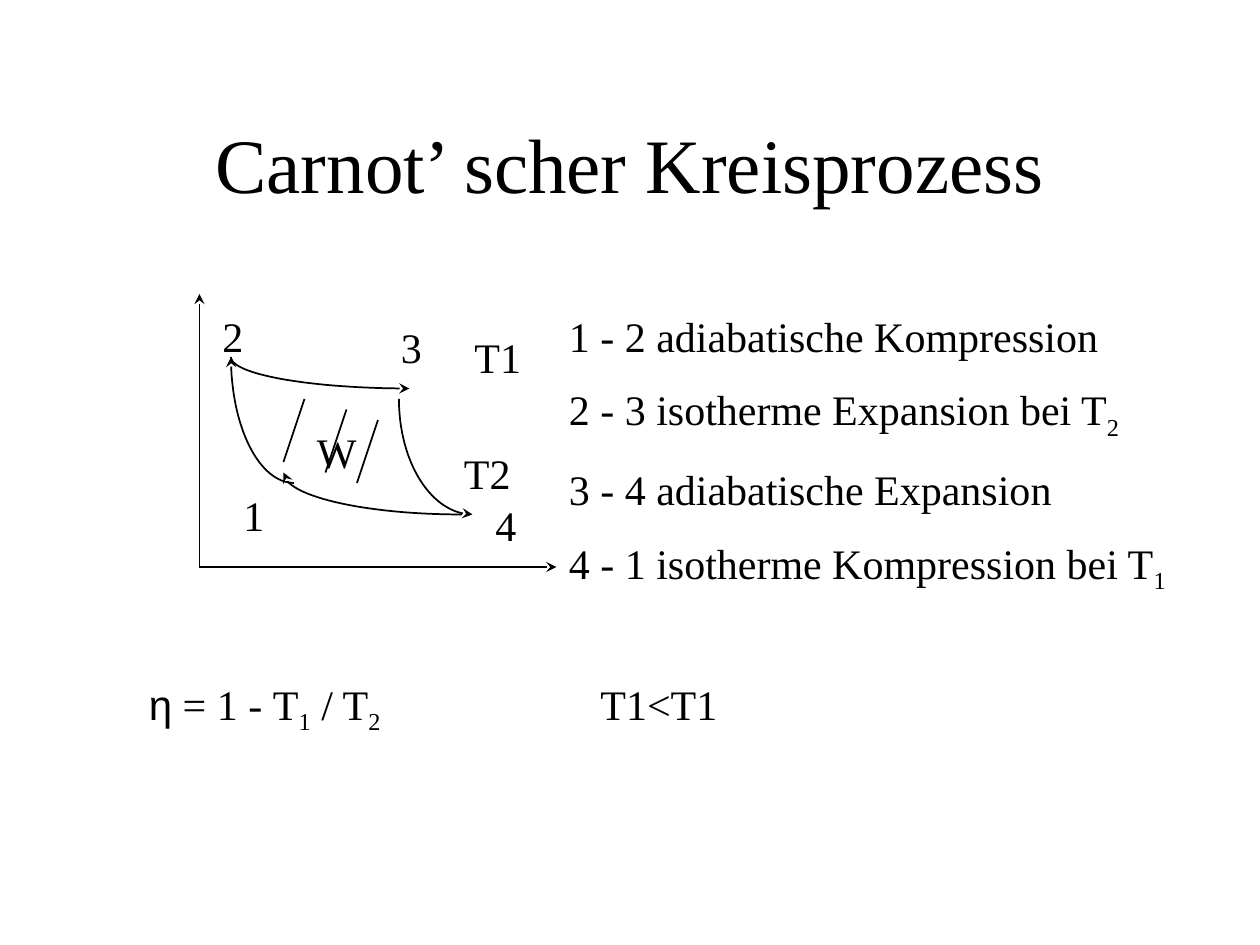
from math import cos, pi, sin

from lxml import etree
from pptx import Presentation
from pptx.dml.color import RGBColor
from pptx.enum.shapes import MSO_CONNECTOR
from pptx.enum.text import MSO_ANCHOR, MSO_AUTO_SIZE, PP_ALIGN
from pptx.oxml.ns import qn
from pptx.util import Pt

STRAIGHT = MSO_CONNECTOR.STRAIGHT
MIDDLE = MSO_ANCHOR.MIDDLE
CENTER = PP_ALIGN.CENTER
GROW = MSO_AUTO_SIZE.SHAPE_TO_FIT_TEXT
STEPS = 32


def color(code):
    return RGBColor.from_string(code)


class Board:
    serif = "Times New Roman"
    sans = "Arial"
    ink = "000000"
    size = 24
    gap = 13

    def __init__(self, slide):
        self.slide = slide

    def font(self, font, size):
        font.name = self.serif
        font.size = Pt(size)
        font.color.rgb = color(self.ink)

    def title(self, text, x, y, w, h):
        shape = self.slide.shapes.title
        shape.left, shape.top, shape.width, shape.height = map(Pt, (x, y, w, h))
        shape.text_frame.text = text
        shape.text_frame.vertical_anchor = MIDDLE
        para = shape.text_frame.paragraphs[0]
        para.alignment = CENTER
        self.font(para.font, 44)

    def text(self, lines, x, y, w, h=36):
        """Every second piece between bars is a subscript."""
        shape = self.slide.shapes.add_textbox(*map(Pt, (x, y, w, h)))
        frame = shape.text_frame
        frame.word_wrap = True
        frame.auto_size = GROW
        for row, line in enumerate(lines):
            para = frame.add_paragraph() if row else frame.paragraphs[0]
            if row:
                para.space_before = Pt(self.gap)
            self.font(para.font, self.size)
            for i, piece in enumerate(line.split("|")):
                if piece:
                    run = para.add_run()
                    run.text = piece
                    if i % 2:
                        run._r.get_or_add_rPr().set("baseline", "-25000")
        return frame

    def stroke(self, shape, end=None):
        """Style a line; end is headEnd (start), tailEnd (finish) or None."""
        shape.line.color.rgb = color(self.ink)
        shape.line.width = Pt(1)
        if end:
            ln = shape.line._get_or_add_ln()
            etree.SubElement(ln, qn("a:" + end), type="stealth")

    def line(self, x1, y1, x2, y2, end=None, group=None):
        shapes = (group or self.slide).shapes
        wire = shapes.add_connector(STRAIGHT, *map(Pt, (x1, y1, x2, y2)))
        self.stroke(wire, end)
        etree.SubElement(wire._element.spPr, qn("a:effectLst"))

    def curve(self, x, y, w, h, end):
        """Quarter ellipse from the lower right to the upper left corner."""
        turns = [pi / 2 * i / STEPS for i in range(STEPS + 1)]
        points = [(Pt(x + w - w * sin(t)), Pt(y + h * cos(t))) for t in turns]
        build = self.slide.shapes.build_freeform(*points[0])
        build.add_line_segments(points[1:], close=False)
        shape = build.convert_to_shape()
        shape.shadow.inherit = False
        shape.fill.background()
        self.stroke(shape, end)


def main():
    deck = Presentation()
    deck.slide_width, deck.slide_height = Pt(720), Pt(540)
    slide = deck.slides.add_slide(deck.slide_layouts[5])
    board = Board(slide)
    board.title("Carnot’ scher Kreisprozess", 54, 48, 612, 90)

    # Axes
    for x, y in ((114, 168), (318, 324)):
        board.line(114, 324, x, y, "tailEnd")

    # Cycle: 1-2, 2-3, 3-4, 4-1
    board.curve(132, 204, 36, 72, "tailEnd")
    board.curve(132, 204, 102, 18, "headEnd")
    board.curve(228, 228, 42, 66, "headEnd")
    board.curve(162, 270, 102, 24, "tailEnd")

    # Hatching of the work area
    hatch = slide.shapes.add_group_shape()
    for x, y in ((162, 264), (204, 276), (186, 270)):
        board.line(x, y, x + 12, y - 36, group=hatch)

    # Diagram labels
    for label, x, y, w in (
        ("1", 132, 276, 30),
        ("2", 120, 174, 30),
        ("3", 222, 180, 36),
        ("4", 276, 282, 30),
        ("W", 174, 240, 36),
        ("T1", 264, 186, 60),
        ("T2", 258, 252, 60),
    ):
        board.text([label], x, y, w)

    # Steps of the cycle
    board.text([
        "1 - 2 adiabatische Kompression",
        "2 - 3 isotherme Expansion bei T|2",
        "3 - 4 adiabatische Expansion",
        "4 - 1 isotherme Kompression bei T|1",
    ], 318, 174, 390, 165.6)

    # Efficiency
    frame = board.text(["η|| = 1 - T|1| / T|2"], 78, 384, 378)
    frame.paragraphs[0].runs[0].font.name = board.sans
    board.text(["T1<T1"], 336, 384, 204)

    deck.save("out.pptx")


if __name__ == "__main__":
    main()
